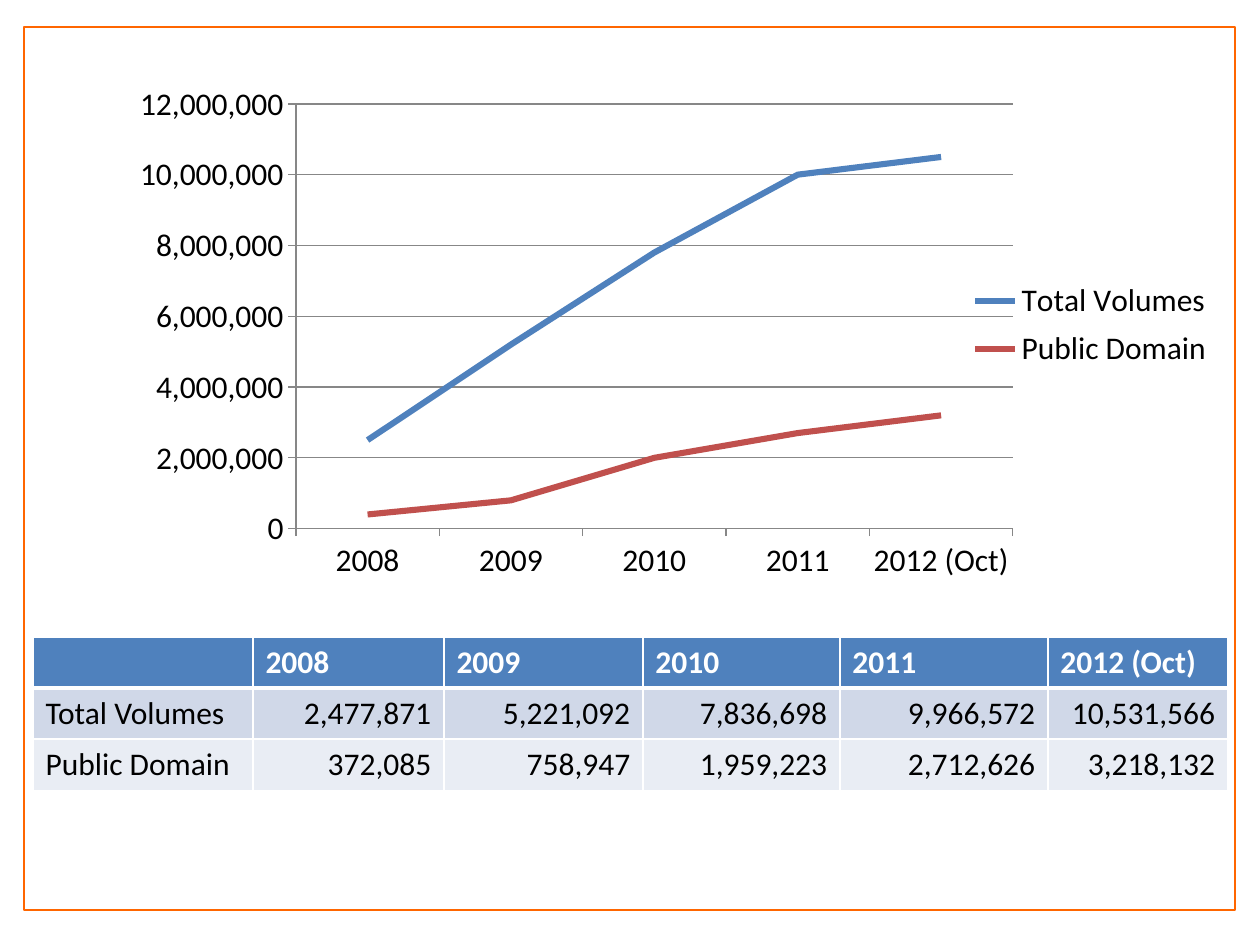
from dataclasses import dataclass

from lxml.etree import SubElement
from pptx import Presentation
from pptx.chart.data import CategoryChartData
from pptx.dml.color import RGBColor
from pptx.enum.chart import XL_CHART_TYPE, XL_LEGEND_POSITION, XL_TICK_MARK
from pptx.enum.shapes import MSO_SHAPE
from pptx.enum.text import PP_ALIGN
from pptx.oxml import parse_xml
from pptx.oxml.ns import nsdecls, qn
from pptx.util import Emu, Pt

PX_PER_INCH = 126
FONT = "Calibri"
FONT_SIZE = Pt(18)
WHITE = RGBColor(0xFF, 0xFF, 0xFF)
BLACK = RGBColor(0x00, 0x00, 0x00)
ORANGE = RGBColor(0xFF, 0x66, 0x00)
BLUE = RGBColor(0x4F, 0x81, 0xBD)
RED = RGBColor(0xC0, 0x50, 0x4D)
GRAY = RGBColor(0x87, 0x87, 0x87)
BAND_DARK = RGBColor(0xD0, 0xD8, 0xE8)
BAND_LIGHT = RGBColor(0xE9, 0xED, 0xF4)


@dataclass(frozen=True)
class Holding:
    name: str
    volumes: tuple[int, ...]
    line: RGBColor
    band: RGBColor


YEARS = ("2008", "2009", "2010", "2011", "2012 (Oct)")
HOLDINGS = (
    Holding("Total Volumes", (2477871, 5221092, 7836698, 9966572, 10531566), BLUE, BAND_DARK),
    Holding("Public Domain", (372085, 758947, 1959223, 2712626, 3218132), RED, BAND_LIGHT),
)
LEFT, WIDTH = 33, 1195
CHART_TOP, CHART_HEIGHT = 76, 559
TABLE_TOP, ROW_HEIGHT = 637, 51
COLUMN_WIDTHS = (220, 191, 199, 197, 208, 180)


def px(n: int) -> Emu:
    return Emu(round(n * 914400 / PX_PER_INCH))


def style_font(font, color: RGBColor, bold: bool = False) -> None:
    font.name, font.size, font.bold = FONT, FONT_SIZE, bold
    font.color.rgb = color


def add_frame(s) -> None:
    sp = s.shapes.add_shape(MSO_SHAPE.RECTANGLE, px(24), px(27), px(1211), px(883))
    sp.shadow.inherit = False
    sp.fill.solid()
    sp.fill.fore_color.rgb = WHITE
    sp.line.color.rgb = ORANGE
    sp.line.width = Pt(1)


def set_borders(cell, top: int, bottom: int) -> None:
    """Draw white borders; top and bottom widths are in points."""
    tc_pr = cell._tc.get_or_add_tcPr()
    for side, width in (("L", 1), ("R", 1), ("T", top), ("B", bottom)):
        ln = SubElement(tc_pr, qn(f"a:ln{side}"), w=str(Pt(width)))
        fill = SubElement(ln, qn("a:solidFill"))
        SubElement(fill, qn("a:srgbClr"), val=str(WHITE))


def add_table(s) -> None:
    rows = [("", *YEARS)]
    rows += [(h.name, *(f"{v:,}" for v in h.volumes)) for h in HOLDINGS]
    fills = (BLUE, *(h.band for h in HOLDINGS))
    table = s.shapes.add_table(len(rows), len(COLUMN_WIDTHS), px(LEFT), px(TABLE_TOP),
                               px(WIDTH), px(ROW_HEIGHT * len(rows))).table
    for column, width in zip(table.columns, COLUMN_WIDTHS):
        column.width = px(width)
    for i, (texts, fill) in enumerate(zip(rows, fills)):
        table.rows[i].height = px(ROW_HEIGHT)
        header = i == 0
        for j, text in enumerate(texts):
            cell = table.cell(i, j)
            set_borders(cell, top=3 if i == 1 else 1, bottom=3 if header else 1)
            cell.fill.solid()
            cell.fill.fore_color.rgb = fill
            p = cell.text_frame.paragraphs[0]
            p.text = text
            p.alignment = PP_ALIGN.LEFT if header or j == 0 else PP_ALIGN.RIGHT
            style_font(p.font, WHITE if header else BLACK, bold=header)
            for r in p.runs:
                style_font(r.font, WHITE if header else BLACK, bold=header)


def manual_layout(x: float, y: float, w: float, h: float, target: str = ""):
    """Make a layout element; lengths are fractions of the chart."""
    return parse_xml(
        f'<c:layout {nsdecls("c")}><c:manualLayout>{target}'
        '<c:xMode val="edge"/><c:yMode val="edge"/>'
        f'<c:x val="{x}"/><c:y val="{y}"/><c:w val="{w}"/><c:h val="{h}"/>'
        '</c:manualLayout></c:layout>')


def place_chart_parts(chart) -> None:
    plot_area = chart._chartSpace.chart.plotArea
    legend = chart.legend._element
    for part in (plot_area, legend):
        for old in part.findall(qn("c:layout")):
            part.remove(old)
    plot_area.insert(0, manual_layout(0.22, 0.05, 0.6, 0.76, '<c:layoutTarget val="inner"/>'))
    legend.find(qn("c:legendPos")).addnext(manual_layout(0.78, 0.35, 0.21, 0.19))


def add_chart(s) -> None:
    data = CategoryChartData(number_format="#,##0")
    data.categories = YEARS
    for h in HOLDINGS:
        data.add_series(h.name, [round(v, -5) for v in h.volumes])
    chart = s.shapes.add_chart(XL_CHART_TYPE.LINE, px(LEFT), px(CHART_TOP),
                               px(WIDTH), px(CHART_HEIGHT), data).chart
    style_font(chart.font, BLACK)
    chart.has_title = False
    chart.has_legend = True
    chart.legend.position = XL_LEGEND_POSITION.RIGHT
    chart.legend.include_in_layout = False
    for axis in (chart.category_axis, chart.value_axis):
        axis.major_tick_mark = XL_TICK_MARK.OUTSIDE
        axis.minor_tick_mark = XL_TICK_MARK.NONE
        axis.format.line.color.rgb = GRAY
    axis = chart.value_axis
    axis.minimum_scale, axis.maximum_scale, axis.major_unit = 0, 12000000, 2000000
    axis.tick_labels.number_format = "#,##0"
    axis.tick_labels.number_format_is_linked = False
    axis.has_major_gridlines = True
    axis.major_gridlines.format.line.color.rgb = GRAY
    plot = chart.plots[0]
    plot.vary_by_categories = False
    for series, h in zip(plot.series, HOLDINGS):
        series.smooth = False
        series.format.line.color.rgb = h.line
        series.format.line.width = Pt(3.5)
    place_chart_parts(chart)


def main() -> None:
    prs = Presentation()
    prs.slide_width, prs.slide_height = px(1260), px(945)
    s = prs.slides.add_slide(prs.slide_layouts[6])
    add_frame(s)
    add_table(s)
    add_chart(s)
    prs.save("out.pptx")


if __name__ == "__main__":
    main()
